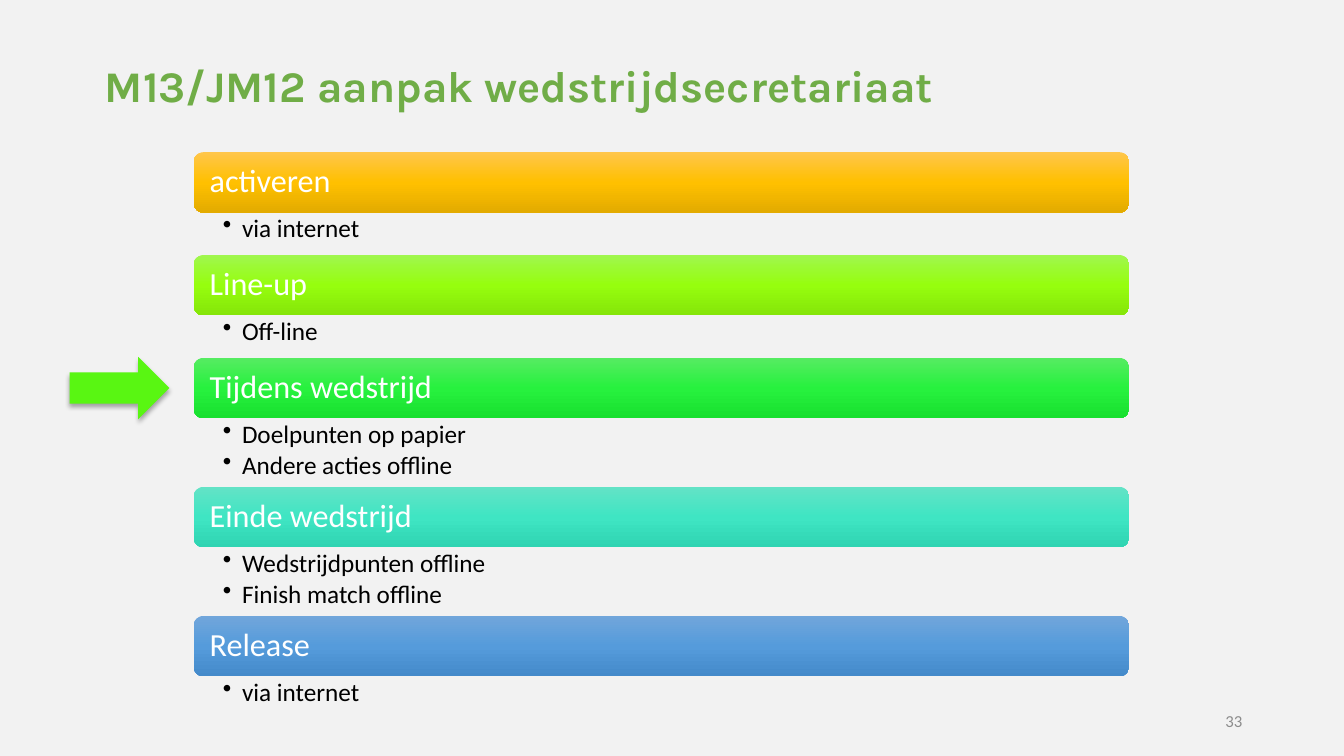
from copy import deepcopy

from pptx import Presentation
from pptx.dml.color import RGBColor
from pptx.enum.shapes import MSO_SHAPE as Shape
from pptx.enum.text import MSO_ANCHOR as Anchor, PP_ALIGN as Align
from pptx.oxml import parse_xml
from pptx.oxml.ns import nsdecls, qn
from pptx.util import Inches, Pt

BACKGROUND = RGBColor(0xF2, 0xF2, 0xF2)
TITLE_GREEN = RGBColor(0x70, 0xAD, 0x47)
ARROW_GREEN = RGBColor(0x59, 0xF6, 0x12)
WHITE = RGBColor(0xFF, 0xFF, 0xFF)
BLACK = RGBColor(0x00, 0x00, 0x00)
GREY = RGBColor(0x8C, 0x8C, 0x8C)
ORANGE = (RGBColor(0xFF, 0xC6, 0x4B), RGBColor(0xFF, 0xC0, 0x00), RGBColor(0xE3, 0xAB, 0x00))
LIME = (RGBColor(0xA0, 0xF7, 0x4E), RGBColor(0x96, 0xFE, 0x0E), RGBColor(0x85, 0xE5, 0x09))
GREEN = (RGBColor(0x56, 0xEC, 0x62), RGBColor(0x27, 0xF1, 0x3E), RGBColor(0x18, 0xE0, 0x2F))
TEAL = (RGBColor(0x63, 0xE3, 0xC6), RGBColor(0x3F, 0xE5, 0xC3), RGBColor(0x2F, 0xD4, 0xB2))
BLUE = (RGBColor(0x71, 0xA6, 0xDB), RGBColor(0x55, 0x9B, 0xDB), RGBColor(0x44, 0x8A, 0xCA))

STEPS = [
    ("activeren", ORANGE, ["via internet"]),
    ("Line-up", LIME, ["Off-line"]),
    ("Tijdens wedstrijd", GREEN, ["Doelpunten op papier", "Andere acties offline"]),
    ("Einde wedstrijd", TEAL, ["Wedstrijdpunten offline", "Finish match offline"]),
    ("Release", BLUE, ["via internet"]),
]
LEFT, WIDTH, BAR_HEIGHT = 1.92, 9.28, 0.6


def add_text(paragraph, text, size, color, font="Calibri", bold=False):
    run = paragraph.add_run()
    run.text = text
    run.font.size = Pt(size)
    run.font.name = font
    run.font.bold = bold
    run.font.color.rgb = color


def set_frame(frame, left, top, right, bottom, anchor):
    frame.word_wrap = True
    frame.vertical_anchor = anchor
    frame.margin_left, frame.margin_top = Inches(left), Inches(top)
    frame.margin_right, frame.margin_bottom = Inches(right), Inches(bottom)


prs = Presentation()
prs.slide_width, prs.slide_height = Inches(13.33), Inches(7.5)
slide = prs.slides.add_slide(prs.slide_layouts[5])
slide.background.fill.solid()
slide.background.fill.fore_color.rgb = BACKGROUND

# Title
title = slide.shapes.title
title.left, title.top = Inches(0.94), Inches(0.46)
title.width, title.height = Inches(9.54), Inches(0.83)
set_frame(title.text_frame, 0.1, 0.05, 0.1, 0.05, Anchor.MIDDLE)
heading = title.text_frame.paragraphs[0]
heading.alignment = Align.LEFT
heading.line_spacing = 0.9
add_text(heading, "M13/JM12 aanpak wedstrijdsecretariaat", 31.2, TITLE_GREEN, "Karla", True)

# Steps: a gradient bar with its bullets below
top = 1.51
for name, shades, details in STEPS:
    bar = slide.shapes.add_shape(Shape.ROUNDED_RECTANGLE, Inches(LEFT), Inches(top),
                                 Inches(WIDTH), Inches(BAR_HEIGHT))
    bar.shadow.inherit = False
    bar.line.fill.background()
    bar.fill.gradient()
    bar.fill.gradient_angle = 270
    stop_list = bar.fill._xPr.find(qn("a:gradFill")).find(qn("a:gsLst"))
    stop_list.insert(1, deepcopy(stop_list[0]))
    for stop, shade, position in zip(bar.fill.gradient_stops, shades, (0, 0.5, 1)):
        stop.color.rgb = shade
        stop.position = position
    set_frame(bar.text_frame, 0.13, 0.1, 0.13, 0.1, Anchor.MIDDLE)
    label = bar.text_frame.paragraphs[0]
    label.alignment = Align.LEFT
    label.line_spacing = 0.9
    add_text(label, name, 23, WHITE)
    top += BAR_HEIGHT

    details_height = 0.16 + 0.26 * len(details)
    details_box = slide.shapes.add_textbox(Inches(LEFT), Inches(top),
                                           Inches(WIDTH), Inches(details_height))
    frame = details_box.text_frame
    set_frame(frame, 0.29, 0.03, 0.18, 0.03, Anchor.TOP)
    for index, detail in enumerate(details):
        bullet = frame.add_paragraph() if index else frame.paragraphs[0]
        bullet.level = 1
        bullet.line_spacing = 0.9
        bullet.space_after = Pt(3)
        properties = bullet._p.get_or_add_pPr()
        properties.set("marL", str(Inches(0.19)))
        properties.set("indent", str(Inches(-0.19)))
        properties.append(parse_xml(f'<a:buChar {nsdecls("a")} char="•"/>'))
        add_text(bullet, detail, 18, BLACK)
    top += details_height

# Slide number
number_box = slide.shapes.add_textbox(Inches(9.42), Inches(6.95), Inches(3), Inches(0.4))
set_frame(number_box.text_frame, 0.1, 0.05, 0.1, 0.05, Anchor.MIDDLE)
number = number_box.text_frame.paragraphs[0]
number.alignment = Align.RIGHT
add_text(number, "33", 12, GREY)

# Arrow to the current step, with a soft shadow
arrow = slide.shapes.add_shape(Shape.RIGHT_ARROW, Inches(0.69), Inches(3.54),
                               Inches(0.99), Inches(0.62))
arrow.fill.solid()
arrow.fill.fore_color.rgb = ARROW_GREEN
arrow.line.fill.background()
arrow._element.spPr.append(parse_xml(
    f'<a:effectLst {nsdecls("a")}>'
    f'<a:outerShdw blurRad="{Pt(3.5)}" dist="{Pt(2.2)}" dir="5400000" rotWithShape="0">'
    '<a:srgbClr val="000000"><a:alpha val="32000"/></a:srgbClr>'
    '</a:outerShdw></a:effectLst>'))

prs.save("out.pptx")
